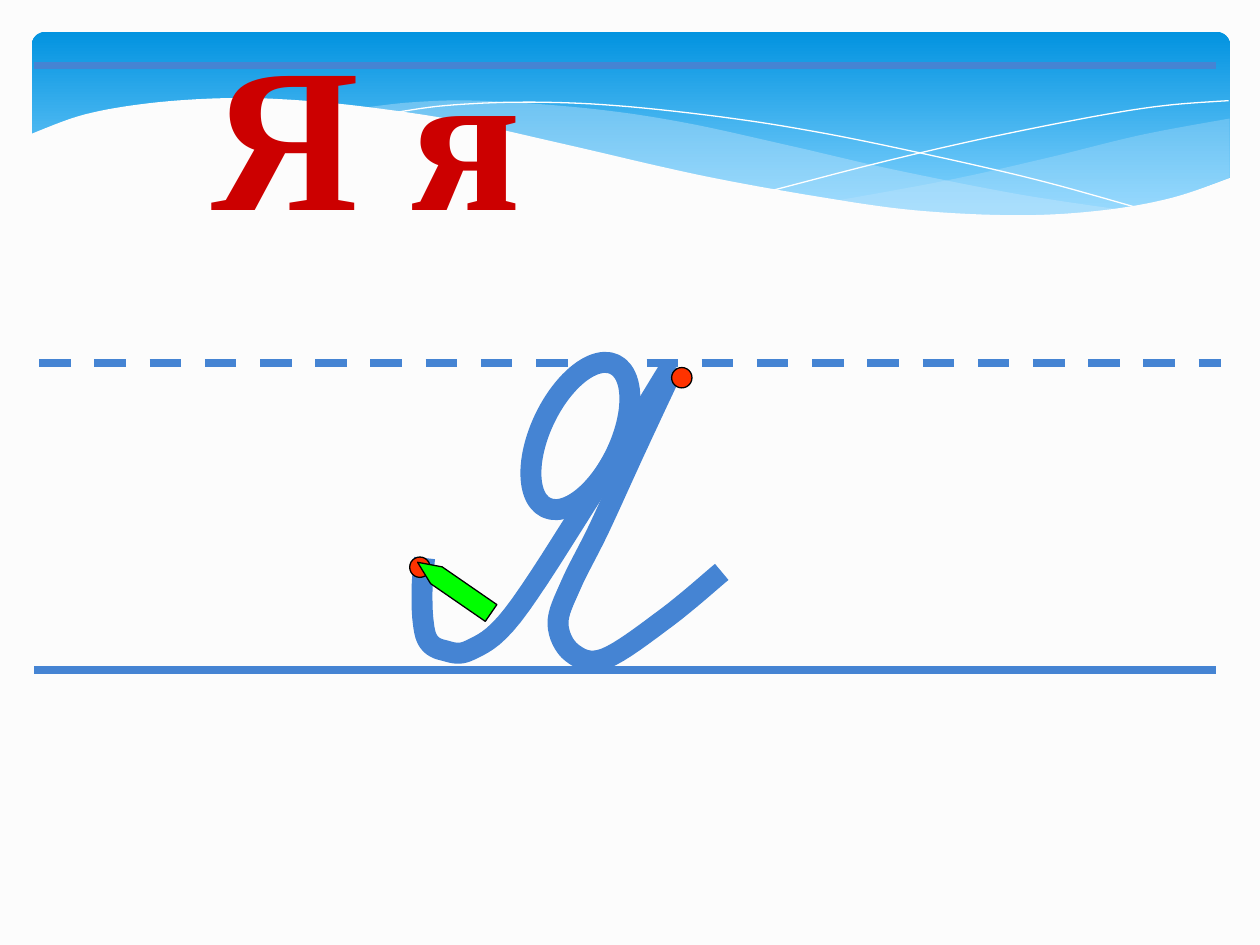
from pptx import Presentation
from pptx.dml.color import RGBColor
from pptx.enum.dml import MSO_LINE
from pptx.enum.shapes import MSO_CONNECTOR, MSO_SHAPE
from pptx.oxml.ns import qn
from pptx.util import Cm, Pt
from lxml.etree import SubElement

theme = {
    "paper": "FCFCFC", "sky": "0293E0", "pale": "83D3FE", "mist": "C6E7FC",
    "white": "FFFFFF", "ink": "4584D3", "dot": "FF3300", "pen": "00FF00",
    "edge": "000000", "red": "CC0000",
    "font": "Times New Roman", "size": 117, "rule": 4.5, "stroke": 12, "thin": 0.75,
}
tint = {key: RGBColor.from_string(val) for key, val in theme.items()
        if key not in ("font", "size", "rule", "stroke", "thin")}

deck = Presentation()
deck.slide_width, deck.slide_height = Cm(25.4), Cm(19.05)
slide = deck.slides.add_slide(deck.slide_layouts[6])
slide.background.fill.solid()
slide.background.fill.fore_color.rgb = tint["paper"]
shapes = slide.shapes


def style(shape, fill=None, line=None, width=0, alpha=None):
    shape.shadow.inherit = False
    if fill:
        shape.fill.solid()
        shape.fill.fore_color.rgb = tint[fill]
    else:
        shape.fill.background()
    if alpha:
        node = shape.fill._xPr.find(qn("a:solidFill"))[0]
        SubElement(node, qn("a:alpha"), val=str(alpha * 1000))
    if line:
        shape.line.color.rgb = tint[line]
        shape.line.width = Pt(width)
    else:
        shape.line.fill.background()


def trace(curves, close=False, steps=8, **look):
    dots = []
    for knots in curves:
        ends = [knots[0], *knots, knots[-1]]
        dots.append(knots[0])
        for a, b, c, d in zip(ends, ends[1:], ends[2:], ends[3:]):
            for n in range(1, steps + 1):
                t = n / steps
                dots.append(tuple(
                    (2 * q + (r - p) * t + (2 * p - 5 * q + 4 * r - s) * t ** 2
                     + (3 * q - p - 3 * r + s) * t ** 3) / 2
                    for p, q, r, s in zip(a, b, c, d)))
    path = [(Cm(x), Cm(y)) for x, y in dots]
    pen = shapes.build_freeform(*path[0])
    pen.add_line_segments(path[1:], close=close)
    style(pen.convert_to_shape(), **look)


sky = shapes.add_shape(MSO_SHAPE.ROUNDED_RECTANGLE, Cm(0.64), Cm(0.64), Cm(24.16), Cm(3.96))
sky.adjustments[0] = 0.07
style(sky)
sky.fill.gradient()
sky.fill.gradient_angle = 270
for stop, (name, spot) in zip(sky.fill.gradient_stops, (("sky", 0), ("pale", 0.9))):
    stop.color.rgb = tint[name]
    stop.position = spot

right = [
    [(24.79, 2.39), (23.01, 2.72), (21.13, 3.18), (19.13, 3.63), (16.79, 4.06)],
    [(16.79, 4.06), (18.59, 4.27), (20.4, 4.37), (22.15, 4.29), (23.57, 4.01), (24.79, 3.58)],
]
middle = [
    [(22.68, 4.24), (20.5, 3.91), (17.93, 3.4), (15.98, 2.95), (13.74, 2.46),
     (11.81, 2.18), (9.65, 2.03), (8.33, 2.06), (7.26, 2.18)],
    [(7.26, 2.18), (9.19, 2.46), (11.4, 2.95), (13.46, 3.43), (15.7, 3.89),
     (17.65, 4.19), (19.63, 4.37), (21.03, 4.39), (22.68, 4.24)],
]
fall = [(7.85, 2.29), (8.97, 2.13), (10.57, 2.06), (12.42, 2.13), (14.78, 2.39),
        (16.89, 2.74), (19.3, 3.25), (21.11, 3.68), (23.04, 4.22)]
rise = [(15.57, 3.84), (17.65, 3.3), (19.71, 2.82), (22, 2.36), (23.47, 2.13), (24.77, 2.03)]
front = [
    [(24.82, 3.58), (23.62, 3.99), (22.23, 4.24), (20.55, 4.34), (18.44, 4.24),
     (16.46, 3.96), (14.1, 3.53), (11.35, 2.9), (9.27, 2.44), (7.42, 2.16),
     (5.84, 2.01), (4.5, 1.98), (3.02, 2.08), (1.7, 2.31), (0.58, 2.72)],
    [(0.58, 5.69), (24.82, 5.69)],
]
trace(right, close=True, fill="mist", alpha=29)
trace(middle, close=True, fill="mist", alpha=40)
for curve in (fall, rise):
    trace([curve], line="white")
trace(front, close=True, fill="paper")

for left, top, dash in ((0.69, 1.32, None), (0.79, 7.32, MSO_LINE.DASH), (0.69, 13.51, None)):
    rule = shapes.add_connector(MSO_CONNECTOR.STRAIGHT, Cm(left), Cm(top), Cm(left + 23.82), Cm(top))
    rule.line.color.rgb = tint["ink"]
    rule.line.width = Pt(theme["rule"])
    rule.line.dash_style = dash
    SubElement(rule._element.spPr, qn("a:effectLst"))

ink = {"line": "ink", "width": theme["stroke"]}
tail = [(8.56, 11.25), (8.51, 11.85), (8.53, 12.52), (8.64, 12.93), (8.94, 13.11),
        (9.47, 13.11), (10.34, 12.4), (11.94, 9.96), (13.49, 7.44)]
stem = [(14.55, 11.53), (13.44, 12.45), (12.19, 13.28), (11.53, 13.16), (11.25, 12.57),
        (11.51, 11.79), (12.07, 10.67), (12.85, 8.97), (13.59, 7.39)]
trace([tail], **ink)
loop = shapes.add_shape(MSO_SHAPE.OVAL, Cm(10.9), Cm(7.19), Cm(1.6), Cm(3.2))
loop.rotation = 25.5
style(loop, **ink)
trace([stem], **ink)

edge = {"line": "edge", "width": theme["thin"]}
for left, top in ((8.26, 11.23), (13.54, 7.41)):
    dot = shapes.add_shape(MSO_SHAPE.FLOWCHART_CONNECTOR, Cm(left), Cm(top), Cm(0.41), Cm(0.41))
    style(dot, fill="dot", **edge)
pen = shapes.add_shape(MSO_SHAPE.PENTAGON, Cm(8.26), Cm(11.64), Cm(1.8), Cm(0.41))
pen.adjustments[0] = 1.12
pen.rotation = 214.6
style(pen, fill="pen", **edge)

box = shapes.add_textbox(Cm(4.01), Cm(0), Cm(7.42), Cm(5.21))
box.text_frame.word_wrap = True
run = box.text_frame.paragraphs[0].add_run()
run.text = "Я я"
for key, val in {"name": theme["font"], "size": Pt(theme["size"]), "bold": True}.items():
    setattr(run.font, key, val)
run.font.color.rgb = tint["red"]

deck.save("out.pptx")
